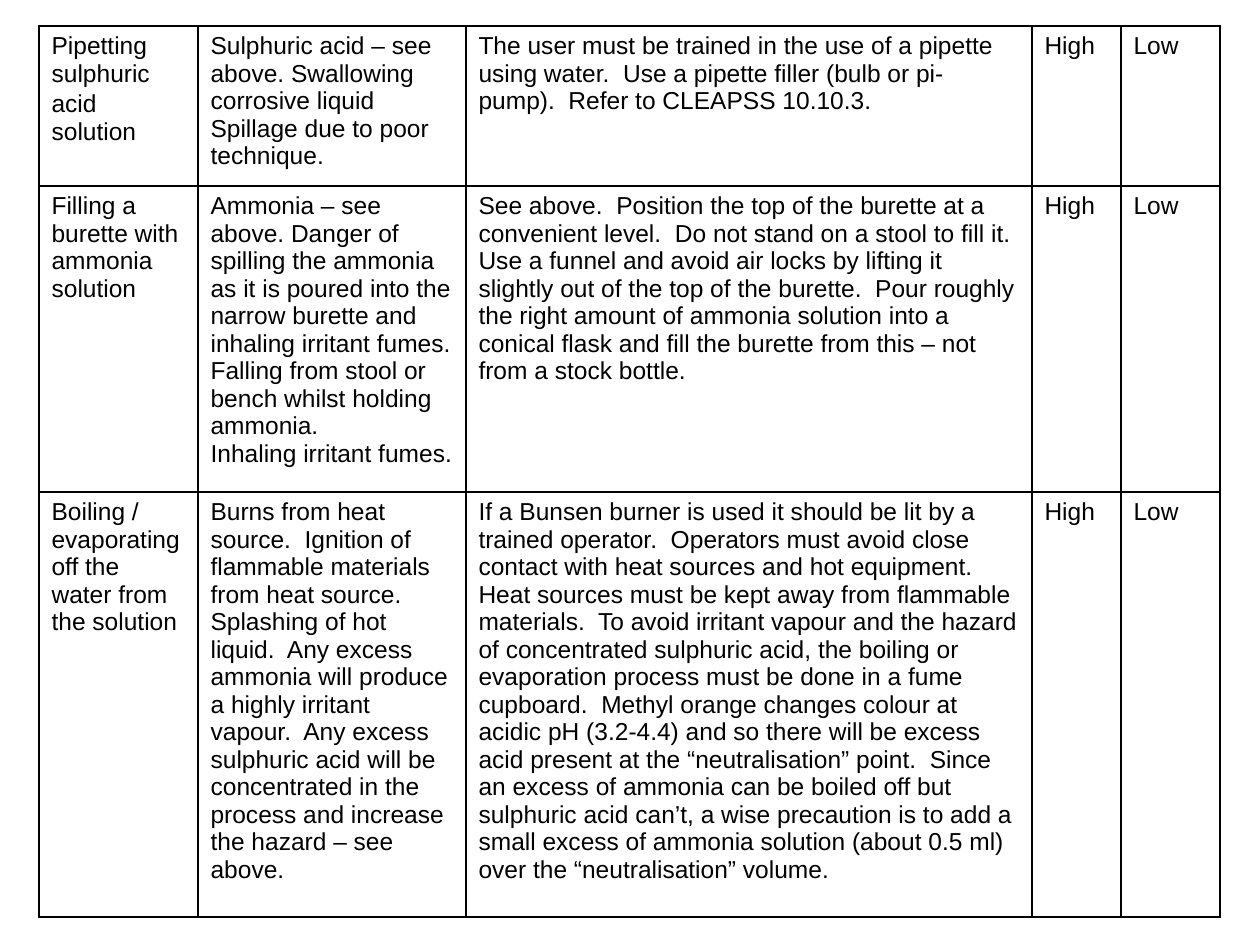
from lxml import etree
from pptx import Presentation
from pptx.dml.color import RGBColor
from pptx.oxml.ns import qn
from pptx.util import Emu, Pt

PX_PER_INCH = 126
FONT = "Arial"
BLACK = "000000"
WHITE = "FFFFFF"
BORDER_SIDES = ("a:lnL", "a:lnR", "a:lnT", "a:lnB")

COLUMN_WIDTHS = [159, 268, 566, 89, 99]
ROW_HEIGHTS = [160, 306, 425]

HAZARDS = [
    (
        "Pipetting sulphuric acid solution",
        "Sulphuric acid – see above. Swallowing corrosive liquid Spillage due to poor technique.",
        "The user must be trained in the use of a pipette using water.  Use a pipette filler "
        "(bulb or pi-pump).  Refer to CLEAPSS 10.10.3.",
    ),
    (
        "Filling a burette with ammonia solution",
        "Ammonia – see above. Danger of spilling the ammonia as it is poured into the narrow "
        "burette and inhaling irritant fumes. Falling from stool or bench whilst holding "
        "ammonia.\nInhaling irritant fumes.",
        "See above.  Position the top of the burette at a convenient level.  Do not stand on a "
        "stool to fill it.  Use a funnel and avoid air locks by lifting it slightly out of the "
        "top of the burette.  Pour roughly the right amount of ammonia solution into a conical "
        "flask and fill the burette from this – not from a stock bottle.",
    ),
    (
        "Boiling / evaporating off the water from the solution",
        "Burns from heat source.  Ignition of flammable materials from heat source.  Splashing "
        "of hot liquid.  Any excess ammonia will produce a highly irritant vapour.  Any excess "
        "sulphuric acid will be concentrated in the process and increase the hazard – see above.",
        "If a Bunsen burner is used it should be lit by a trained operator.  Operators must "
        "avoid close contact with heat sources and hot equipment.  Heat sources must be kept "
        "away from flammable materials.  To avoid irritant vapour and the hazard of concentrated "
        "sulphuric acid, the boiling or evaporation process must be done in a fume cupboard.  "
        "Methyl orange changes colour at acidic pH (3.2-4.4) and so there will be excess acid "
        "present at the “neutralisation” point.  Since an excess of ammonia can be boiled off "
        "but sulphuric acid can’t, a wise precaution is to add a small excess of ammonia "
        "solution (about 0.5 ml) over the “neutralisation” volume.",
    ),
]
RISK_BEFORE, RISK_AFTER = "High", "Low"


def px(length):
    """Turn a length in px into EMU."""
    return Emu(round(length * 914400 / PX_PER_INCH))


def colour(value):
    """Turn a hex string into a colour."""
    return RGBColor.from_string(value)


def set_borders(cell):
    """Draw a thin black line on all four sides of a cell."""
    properties = cell._tc.get_or_add_tcPr()
    for side in BORDER_SIDES:
        line = etree.SubElement(properties, qn(side), w=str(Pt(1)))
        fill = etree.SubElement(line, qn("a:solidFill"))
        etree.SubElement(fill, qn("a:srgbClr"), val=BLACK)


def style_paragraph(para):
    """Give a paragraph the font of the table."""
    para.font.name = FONT
    para.font.size = Pt(14)
    para.font.color.rgb = colour(BLACK)


def fill_cell(cell, text):
    """Write the text of one cell and set its look."""
    set_borders(cell)
    cell.fill.solid()
    cell.fill.fore_color.rgb = colour(WHITE)
    cell.text = text
    for para in cell.text_frame.paragraphs:
        style_paragraph(para)


def enlarge_last_space(para):
    """Set the space before the last word of a paragraph in 16 points."""
    start, last_word = para.text.rsplit(" ", 1)
    para.runs[0].text = start
    space = para.add_run()
    space.text = " "
    space.font.size = Pt(16)
    para.add_run().text = last_word


def add_hazard_table(page, left, top):
    """Place the risk assessment table with its top left corner at the given point."""
    frame = page.shapes.add_table(
        len(ROW_HEIGHTS), len(COLUMN_WIDTHS), px(left), px(top),
        px(sum(COLUMN_WIDTHS)), px(sum(ROW_HEIGHTS)),
    )
    table = frame.table
    table.first_row = False
    table.horz_banding = False
    for column, width in zip(table.columns, COLUMN_WIDTHS):
        column.width = px(width)
    for row, height, hazard in zip(table.rows, ROW_HEIGHTS, HAZARDS):
        row.height = px(height)
        for cell, text in zip(row.cells, (*hazard, RISK_BEFORE, RISK_AFTER)):
            fill_cell(cell, text)
    enlarge_last_space(table.cell(0, 0).text_frame.paragraphs[0])


def main():
    """Build the deck and save it."""
    deck = Presentation()
    deck.slide_width = px(1260)
    deck.slide_height = px(945)
    page = deck.slides.add_slide(deck.slide_layouts[6])
    add_hazard_table(page, 39, 26)
    deck.save("out.pptx")


if __name__ == "__main__":
    main()
